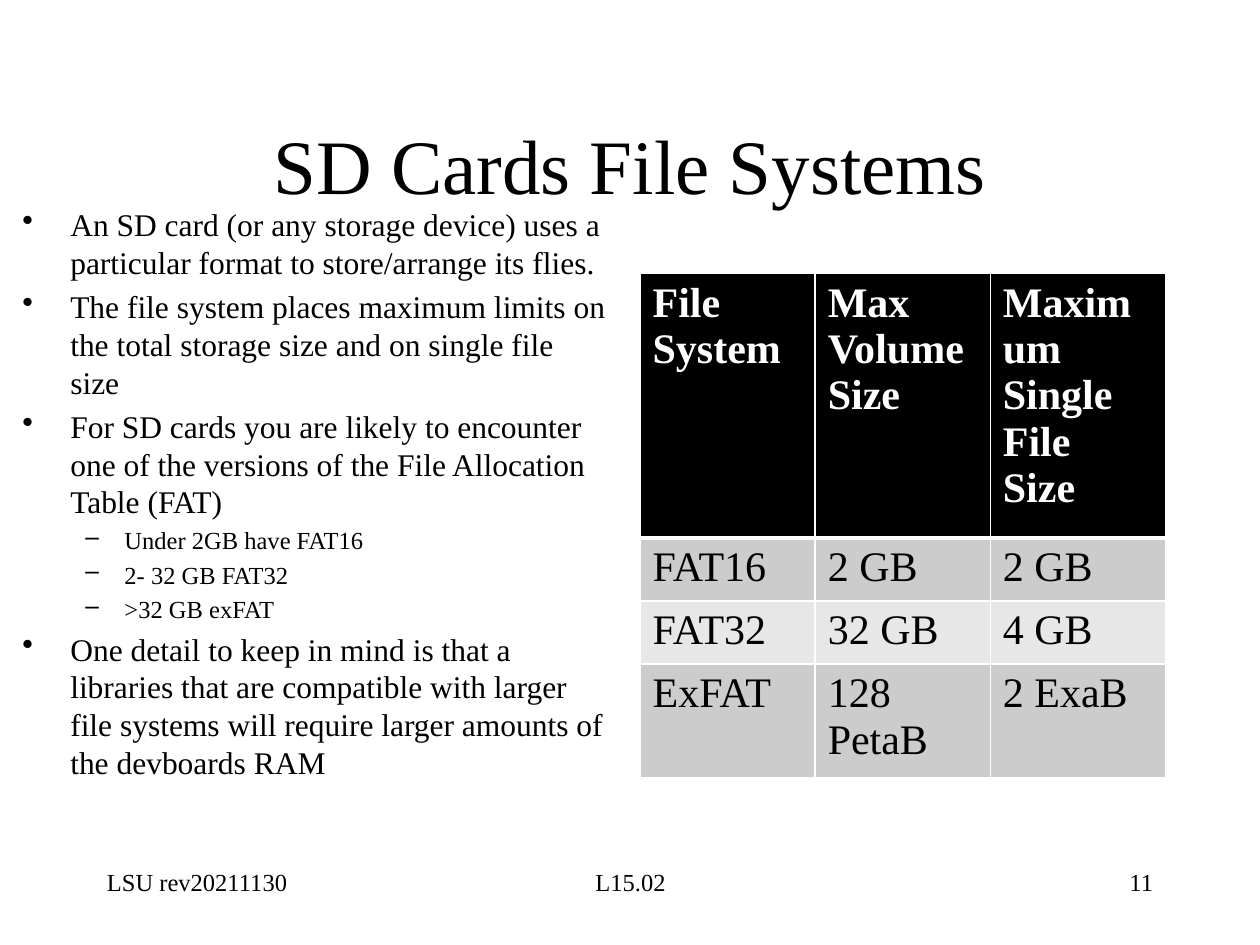
from lxml import etree
from pptx import Presentation
from pptx.dml.color import RGBColor
from pptx.enum.text import MSO_ANCHOR, PP_ALIGN
from pptx.oxml.ns import qn
from pptx.util import Inches, Pt

BLACK = RGBColor(0x00, 0x00, 0x00)
WHITE = RGBColor(0xFF, 0xFF, 0xFF)
DARK_BAND = RGBColor(0xCC, 0xCC, 0xCC)
LIGHT_BAND = RGBColor(0xE7, 0xE7, 0xE7)
LEFT, CENTER, RIGHT = PP_ALIGN.LEFT, PP_ALIGN.CENTER, PP_ALIGN.RIGHT
TOP, MIDDLE = MSO_ANCHOR.TOP, MSO_ANCHOR.MIDDLE
FONT_NAME = "Times New Roman"

LEVELS = (
    {"margin": 0.38, "indent": -0.38, "bullet": "•", "size": 18},
    {"margin": 0.81, "indent": -0.31, "bullet": "–", "size": 14},
)
POINTS = (
    (0, "An SD card (or any storage device) uses a particular format to store/arrange its flies."),
    (0, "The file system places maximum limits on the total storage size and on single file size"),
    (0, "For SD cards you are likely to encounter one of the versions of the File Allocation Table (FAT)"),
    (1, "Under 2GB have FAT16"),
    (1, "2- 32 GB FAT32"),
    (1, ">32 GB exFAT"),
    (0, "One detail to keep in mind is that a libraries that are compatible with larger "
        "file systems will require larger amounts of the devboards RAM"),
)
FILE_SYSTEMS = (
    ("File System", "Max Volume Size", "Maximum Single File\nSize"),
    ("FAT16", "2 GB", "2 GB"),
    ("FAT32", "32 GB", "4 GB"),
    ("ExFAT", "128 PetaB", "2 ExaB"),
)
FOOTERS = (
    ((0.75, 6.83, 2.08, 0.5), "LSU rev20211130", LEFT),
    ((3.42, 6.83, 3.17, 0.5), "L15.02", CENTER),
    ((7.17, 6.83, 2.08, 0.5), "11", RIGHT),
)


def style_font(font, size, color=BLACK, bold=False):
    """Apply the slide typeface with a size, colour and weight."""
    values = {"name": FONT_NAME, "size": Pt(size), "bold": bold}
    for name, value in values.items():
        setattr(font, name, value)
    font.color.rgb = color


def add_text_frame(slide, box, anchor=TOP):
    """Add a wrapping text box and return its text frame."""
    text_frame = slide.shapes.add_textbox(*map(Inches, box)).text_frame
    for name, value in {"word_wrap": True, "vertical_anchor": anchor}.items():
        setattr(text_frame, name, value)
    return text_frame


def add_line_of_text(slide, box, text, size, alignment, anchor=TOP):
    """Add a text box holding one aligned paragraph."""
    paragraph = add_text_frame(slide, box, anchor).paragraphs[0]
    paragraph.text = text
    paragraph.alignment = alignment
    style_font(paragraph.runs[0].font, size)


def set_bullet(paragraph, level):
    """Give a paragraph the hanging bullet of its level."""
    properties = paragraph._p.get_or_add_pPr()
    properties.set("marL", str(Inches(level["margin"])))
    properties.set("indent", str(Inches(level["indent"])))
    etree.SubElement(properties, qn("a:buChar")).set("char", level["bullet"])


def add_bullets(slide, box, points):
    """Add the two-level bullet list."""
    text_frame = add_text_frame(slide, box)
    for index, (depth, text) in enumerate(points):
        paragraph = text_frame.paragraphs[0] if index == 0 else text_frame.add_paragraph()
        level = LEVELS[depth]
        paragraph.text = text
        paragraph.level = depth
        set_bullet(paragraph, level)
        paragraph.space_before = Pt(0.2 * level["size"] if index else 0)
        style_font(paragraph.runs[0].font, level["size"])


def set_borders(cell, widths):
    """Draw white borders of the given widths around a cell."""
    properties = cell._tc.get_or_add_tcPr()
    for position, (side, width) in enumerate(widths.items()):
        line = etree.Element(qn(f"a:ln{side}"), w=str(Pt(width)))
        fill = etree.SubElement(line, qn("a:solidFill"))
        etree.SubElement(fill, qn("a:srgbClr")).set("val", str(WHITE))
        properties.insert(position, line)


def fill_cell(cell, text, row):
    """Write and style one cell according to its row."""
    header = row == 0
    cell.fill.solid()
    cell.fill.fore_color.rgb = BLACK if header else (DARK_BAND if row % 2 else LIGHT_BAND)
    set_borders(cell, {"L": 1, "R": 1, "T": 3 if row == 1 else 1, "B": 3 if header else 1})
    cell.text_frame.text = text
    for paragraph in cell.text_frame.paragraphs:
        style_font(paragraph.runs[0].font, 24, WHITE if header else BLACK, header)


def add_file_system_table(slide, box, rows):
    """Add the table of file system limits."""
    left, top, width, height = map(Inches, box)
    table = slide.shapes.add_table(len(rows), len(rows[0]), left, top, width, height).table
    table.horz_banding = False
    for row, texts in enumerate(rows):
        for column, text in enumerate(texts):
            fill_cell(table.cell(row, column), text, row)


def main():
    """Build the slide and save it."""
    presentation = Presentation()
    presentation.slide_width = Inches(10)
    presentation.slide_height = Inches(7.5)
    slide = presentation.slides.add_slide(presentation.slide_layouts[6])
    add_line_of_text(slide, (0.75, 0.67, 8.5, 1.25), "SD Cards File Systems", 44, CENTER, MIDDLE)
    add_bullets(slide, (0.08, 1.58, 4.83, 5.08), POINTS)
    add_file_system_table(slide, (5.08, 2.17, 4.17, 1.64), FILE_SYSTEMS)
    for box, text, alignment in FOOTERS:
        add_line_of_text(slide, box, text, 14, alignment)
    presentation.save("out.pptx")


if __name__ == "__main__":
    main()
